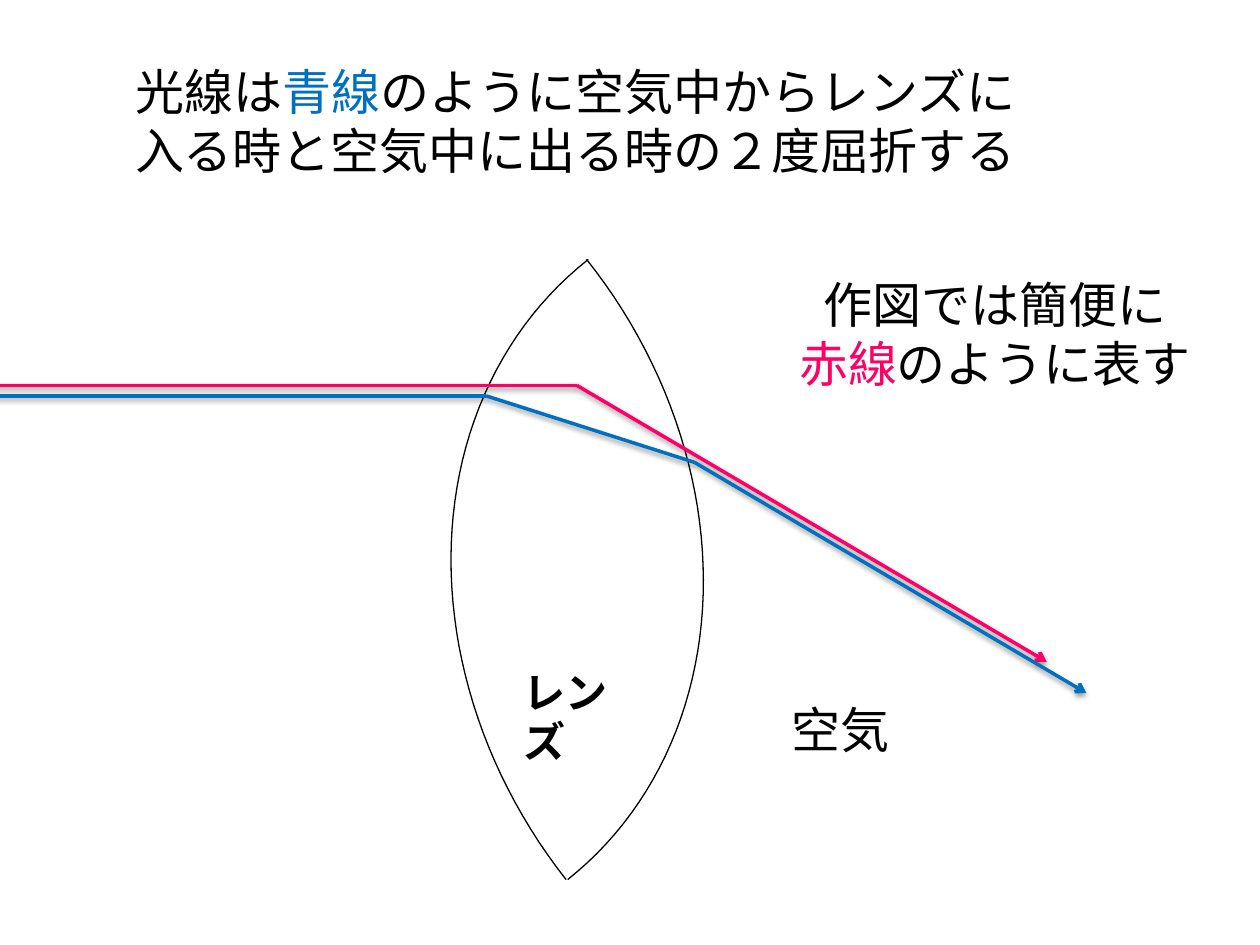
from math import cos, pi, sin
from lxml import etree
from pptx import Presentation
from pptx.dml.color import RGBColor
from pptx.enum.shapes import MSO_CONNECTOR
from pptx.enum.text import MSO_ANCHOR, PP_ALIGN
from pptx.oxml import parse_xml
from pptx.oxml.ns import nsdecls, qn
from pptx.util import Cm, Pt

COLORS = {"black": "000000", "blue": "0070C0", "red": "FF0066"}
JP_FONT = "Noto Sans CJK JP"
SHADOW = (
    f'<a:effectLst {nsdecls("a")}><a:outerShdw blurRad="40000" dist="20000" '
    'dir="5400000" rotWithShape="0"><a:srgbClr val="000000">'
    '<a:alpha val="38000"/></a:srgbClr></a:outerShdw></a:effectLst>'
)


def rgb(name):
    return RGBColor.from_string(COLORS[name])


def write(p, runs, font, size, bold=False):
    for text, color in runs:
        r = p.add_run()
        r.text = text
        r.font.name = font
        r.font.size = Pt(size)
        r.font.bold = bold
        r.font.color.rgb = rgb(color)
        ea = etree.SubElement(r.font._element, qn("a:ea"))
        ea.set("typeface", JP_FONT)


prs = Presentation()
prs.slide_width, prs.slide_height = Cm(25.4), Cm(19.05)
s = prs.slides.add_slide(prs.slide_layouts[5])

title = s.shapes.title
title.left, title.top, title.width, title.height = Cm(2.1), Cm(0.92), Cm(19), Cm(3)
tf = title.text_frame
tf.word_wrap = True
tf.vertical_anchor = MSO_ANCHOR.MIDDLE
p = tf.paragraphs[0]
p.alignment = PP_ALIGN.CENTER
p.line_spacing = Pt(34)
write(p, [("光線は", "black"), ("青線", "blue"),
          ("のように空気中からレンズに入る時と空気中に出る時の２度屈折する", "black")],
      JP_FONT, 28)

arc_w, arc_h, steps = 9.55, 8.08, 48
angles = [pi / 2 * i / steps for i in range(steps + 1)]
arc = [(Cm(arc_w * sin(a)), Cm(arc_h * (1 - cos(a)))) for a in angles]
for rotation in (51.5, 231.8):
    fb = s.shapes.build_freeform(*arc[0])
    fb.add_line_segments(arc[1:], close=False)
    sp = fb.convert_to_shape(Cm(6.86), Cm(7.44))
    sp.rotation = rotation
    sp.shadow.inherit = False
    sp.fill.background()
    sp.line.color.rgb = rgb("black")
    sp.line.width = Pt(0.75)

rays = [
    ("red", [(-0.5, 7.77), (11.63, 7.77), (21.1, 13.34)]),
    ("blue", [(-0.5, 7.98), (9.8, 7.98), (14, 9.32), (21.9, 13.97)]),
]
for color, points in rays:
    for start, end in zip(points, points[1:]):
        ray = s.shapes.add_connector(
            MSO_CONNECTOR.STRAIGHT, *[Cm(v) for v in start + end])
        ray.line.color.rgb = rgb(color)
        ray.line.width = Pt(2)
        if end == points[-1]:
            tail = etree.SubElement(ray.line._get_or_add_ln(), qn("a:tailEnd"))
            tail.set("type", "arrow")
        ray._element.spPr.append(parse_xml(SHADOW))

left, center = PP_ALIGN.LEFT, PP_ALIGN.CENTER
labels = [
    ((10.31, 13.34, 3, 1.3), [[("レンズ", "black")]],
     "Arial", 24, True, left, MSO_ANCHOR.TOP, 28),
    ((15.7, 13.97, 2.8, 1.45), [[("空気", "black")]],
     "Arial", 28, False, left, MSO_ANCHOR.TOP, 34),
    ((15.7, 5.13, 8.71, 3.18),
     [[("作図では簡便に", "black")], [("赤線", "red"), ("のように表す", "black")]],
     JP_FONT, 28, False, center, MSO_ANCHOR.MIDDLE, 34),
]
for box, paragraphs, font, size, bold, align, anchor, spacing in labels:
    tf = s.shapes.add_textbox(*[Cm(v) for v in box]).text_frame
    tf.word_wrap = True
    tf.vertical_anchor = anchor
    for i, runs in enumerate(paragraphs):
        p = tf.add_paragraph() if i else tf.paragraphs[0]
        p.alignment = align
        p.line_spacing = Pt(spacing)
        write(p, runs, font, size, bold)

prs.save("out.pptx")
